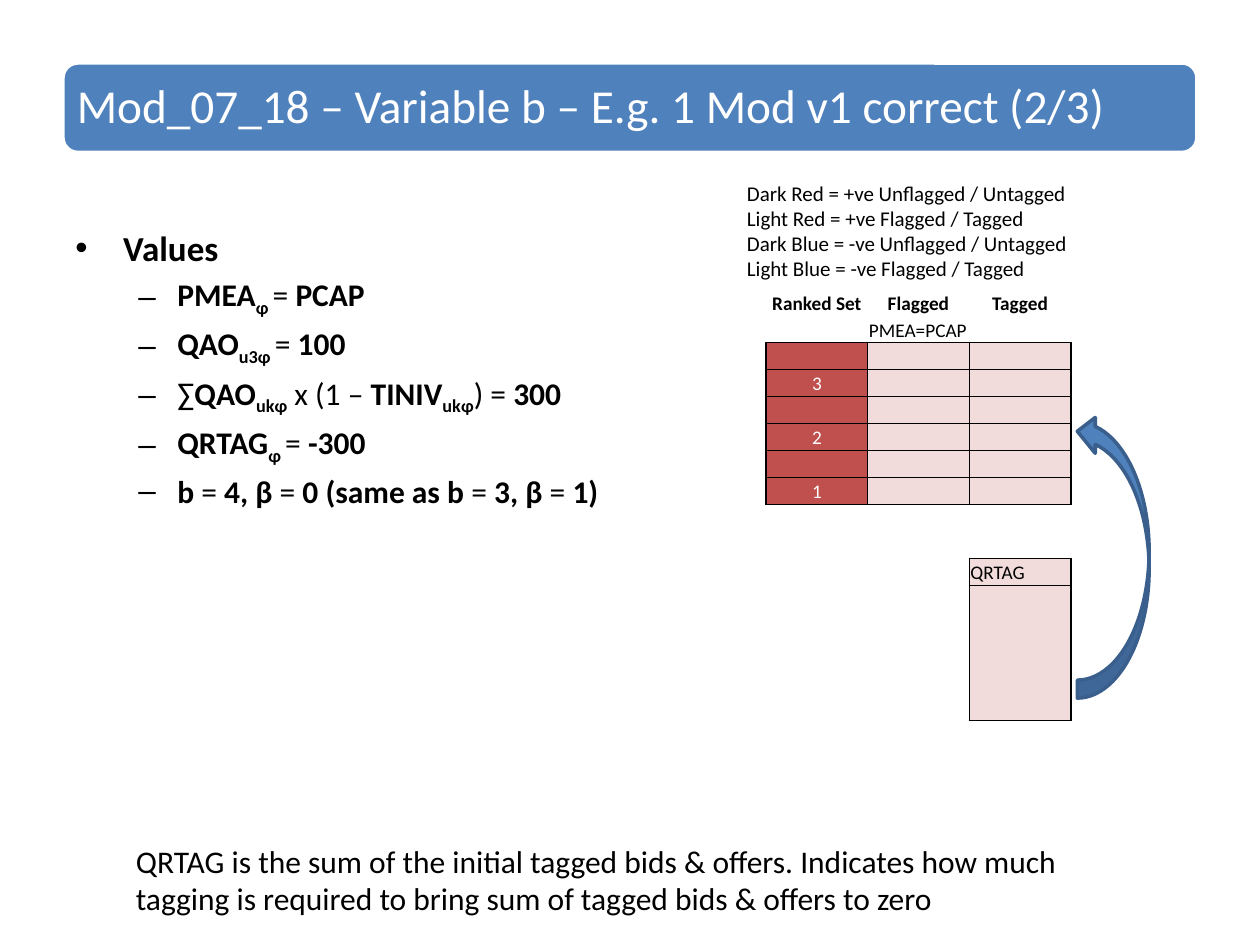
from lxml import etree
from pptx import Presentation, util as u
from pptx.dml.color import RGBColor
from pptx.enum import shapes, text
from pptx.oxml import ns

FONT = "Calibri"
BLACK = RGBColor(0x00, 0x00, 0x00)
WHITE = RGBColor(0xFF, 0xFF, 0xFF)
BLUE = RGBColor(0x4F, 0x81, 0xBD)
DARK_BLUE = RGBColor(0x3A, 0x5F, 0x8C)
DARK_RED = RGBColor(0xC0, 0x50, 0x4D)
LIGHT_RED = RGBColor(0xF2, 0xDC, 0xDB)
PLAIN_TABLE = "{2D5ABB26-0587-4C30-8999-92F81FD0307C}"

PLAIN, BOLD, SUB = "plain", "bold", "subscript"
VALUES = [
    [("PMEA", BOLD), ("φ ", SUB), ("= ", PLAIN), ("PCAP", BOLD)],
    [("QAO", BOLD), ("u3φ ", SUB), ("= ", PLAIN), ("100", BOLD)],
    [("∑", PLAIN), ("QAO", BOLD), ("ukφ", SUB), (" x (1 – ", PLAIN),
     ("TINIV", BOLD), ("ukφ", SUB), (") =", PLAIN), (" 300", BOLD)],
    [("QRTAG", BOLD), ("φ ", SUB), ("= ", PLAIN), ("-300", BOLD)],
    [("b ", BOLD), ("=", PLAIN), (" 4, β ", BOLD), ("=", PLAIN), (" 0 (same as b ", BOLD),
     ("=", PLAIN), (" 3, β ", BOLD), ("=", PLAIN), (" 1)", BOLD)],
]
LEGEND = [
    "Dark Red = +ve Unflagged / Untagged",
    "Light Red = +ve Flagged / Tagged",
    "Dark Blue = -ve Unflagged / Untagged",
    "Light Blue = -ve Flagged / Tagged",
]
NOTE = ("QRTAG is the sum of the initial tagged bids & offers. Indicates how much "
        "tagging is required to bring sum of tagged bids & offers to zero")


def inches(*lengths):
    return [u.Inches(length) for length in lengths]


def write(para, words, size, color=BLACK, style=PLAIN):
    span = para.add_run()
    span.text = words
    span.font.name = FONT
    span.font.size = u.Pt(size)
    span.font.color.rgb = color
    span.font.bold = style != PLAIN
    if style == SUB:
        span.font._element.set("baseline", "-25000")


def add_text_frame(page, box):
    frame = page.shapes.add_textbox(*inches(*box)).text_frame
    frame.word_wrap = True
    return frame


def next_para(frame, index):
    return frame.add_paragraph() if index else frame.paragraphs[0]


def add_bullet(para, mark, left, hang, level=0):
    para.level = level
    props = para._p.get_or_add_pPr()
    props.set("marL", str(u.Inches(left)))
    props.set("indent", str(-u.Inches(hang)))
    etree.SubElement(props, ns.qn("a:buFont")).set("typeface", "Arial")
    etree.SubElement(props, ns.qn("a:buChar")).set("char", mark)


def draw_shape(page, preset, box, line_color):
    shape = page.shapes.add_shape(preset, *inches(*box))
    shape.shadow.inherit = False
    shape.fill.solid()
    shape.fill.fore_color.rgb = BLUE
    shape.line.color.rgb = line_color
    shape.line.width = u.Pt(2)
    return shape


def draw_title(page, box):
    draw_shape(page, shapes.MSO_SHAPE.ROUNDED_RECTANGLE, box, WHITE)
    frame = add_text_frame(page, box)
    frame.vertical_anchor = text.MSO_ANCHOR.MIDDLE
    frame.margin_left = frame.margin_right = u.Inches(0.11)
    frame.margin_top = frame.margin_bottom = u.Inches(0.11)
    para = frame.paragraphs[0]
    para.line_spacing = 0.9
    write(para, "Mod_07_18 – Variable b – E.g. 1 Mod v1 correct (2/3)", 27, WHITE)


def draw_values(page, box):
    frame = add_text_frame(page, box)
    heading = frame.paragraphs[0]
    heading.space_before = u.Pt(4)
    add_bullet(heading, "•", 0.38, 0.38)
    write(heading, "Values", 20, style=BOLD)
    for parts in VALUES:
        para = frame.add_paragraph()
        para.space_before = u.Pt(3.6)
        add_bullet(para, "–", 0.81, 0.31, level=1)
        for words, style in parts:
            write(para, words, 18, style=style)


def draw_lines(page, box, lines, size):
    frame = add_text_frame(page, box)
    for index, line in enumerate(lines):
        write(next_para(frame, index), line, size)


def add_borders(cell, sides):
    """Draw black borders on the given sides, listed in the order L, R, T, B."""
    props = cell._tc.get_or_add_tcPr()
    for index, side in enumerate(sides):
        line = etree.Element(ns.qn(f"a:ln{side}"), w=str(u.Pt(1)))
        fill = etree.SubElement(line, ns.qn("a:solidFill"))
        etree.SubElement(fill, ns.qn("a:srgbClr")).set("val", str(BLACK))
        props.insert(index, line)


def fill_block(table, column, first, last, color):
    """Fill a run of cells in one column and outline it as a single box."""
    for row in range(first, last + 1):
        cell = table.cell(row, column)
        cell.fill.solid()
        cell.fill.fore_color.rgb = color
        add_borders(cell, "LR" + "T" * (row == first) + "B" * (row == last))


def write_cell(table, row, column, words, align=text.PP_ALIGN.CENTER,
               anchor=text.MSO_ANCHOR.MIDDLE, **style):
    cell = table.cell(row, column)
    cell.vertical_anchor = anchor
    para = cell.text_frame.paragraphs[0]
    para.alignment = align
    write(para, words, 11, **style)


def draw_ranked_table(page, box):
    row_count, column_count = 18, 3
    frame = page.shapes.add_table(row_count, column_count, *inches(*box))
    table = frame.table
    table.first_row = table.horz_banding = False
    table._tbl.tblPr.find(ns.qn("a:tableStyleId")).text = PLAIN_TABLE
    for row in table.rows:
        row.height = u.Inches(box[3] / row_count)
        for cell in row.cells:
            cell.margin_left = cell.margin_right = cell.margin_top = u.Inches(0.01)
            cell.margin_bottom = 0
            cell.fill.background()
            end = etree.SubElement(cell.text_frame.paragraphs[0]._p, ns.qn("a:endParaRPr"))
            end.set("sz", "1100")

    bottom = text.MSO_ANCHOR.BOTTOM
    for column, heading in enumerate(["Ranked Set", "Flagged", "Tagged"]):
        write_cell(table, 0, column, heading, anchor=bottom, style=BOLD)
    write_cell(table, 1, 1, "PMEA=PCAP", text.PP_ALIGN.LEFT, bottom)

    for index, rank in enumerate("321"):
        first = 2 + 2 * index
        for column, color in enumerate([DARK_RED, LIGHT_RED, LIGHT_RED]):
            fill_block(table, column, first, first + 1, color)
        write_cell(table, first + 1, 0, rank, color=WHITE)

    fill_block(table, 2, 10, 15, LIGHT_RED)
    write_cell(table, 10, 2, "QRTAG", text.PP_ALIGN.LEFT)


def draw_return_arrow(page, box):
    arrow = draw_shape(page, shapes.MSO_SHAPE.CURVED_RIGHT_ARROW, box, DARK_BLUE)
    arrow.rotation = 180


def main():
    deck = Presentation()
    deck.slide_width, deck.slide_height = inches(10, 7.5)
    page = deck.slides.add_slide(deck.slide_layouts[6])
    draw_values(page, (0.5, 1.75, 5.6, 4.95))
    draw_ranked_table(page, (6.08, 2.29, 2.42, 3.86))
    draw_title(page, (0.5, 0.5, 9, 0.71))
    draw_lines(page, (0.98, 6.63, 7.85, 0.71), [NOTE], 18)
    draw_lines(page, (5.83, 1.38, 3.21, 0.91), LEGEND, 12)
    draw_return_arrow(page, (8.55, 3.28, 0.57, 2.26))
    deck.save("out.pptx")


if __name__ == "__main__":
    main()
